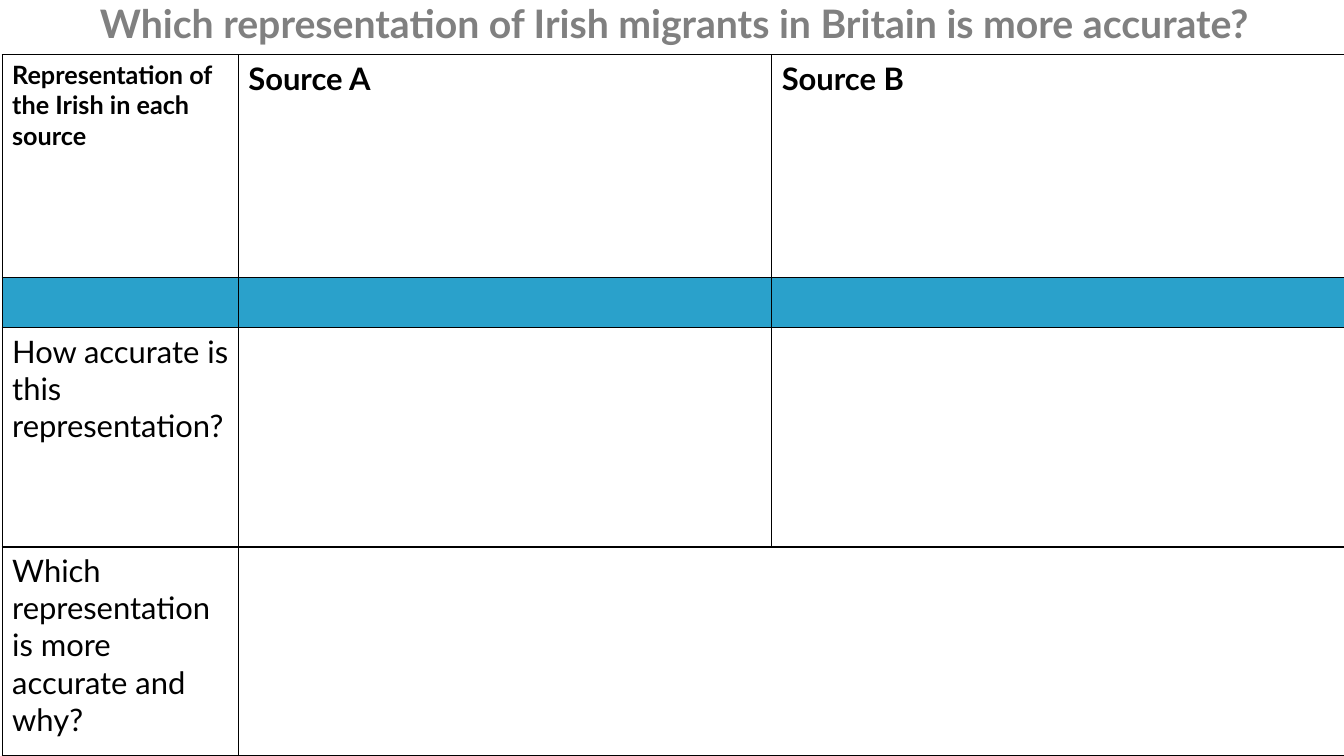
from lxml import etree
from pptx import Presentation
from pptx.dml.color import RGBColor
from pptx.enum.text import MSO_ANCHOR, MSO_AUTO_SIZE, PP_ALIGN
from pptx.oxml.ns import qn
from pptx.util import Pt

PX = 9525
FONT = "Lato"
CENTER = PP_ALIGN.CENTER
TOP = MSO_ANCHOR.TOP
NO_FIT = MSO_AUTO_SIZE.NONE
COLOURS = {"title": "808080", "text": "000000", "border": "000000",
           "cell": "FFFFFF", "divider": "2AA1CB"}
COLUMN_WIDTHS = [225, 508, 548]
ROW_HEIGHTS = [212, 48, 209, 199]
DIVIDER_ROW = 1
QUESTIONS = [
    ["Representation of the Irish in each source", "Source A", "Source B"],
    ["", "", ""],
    ["How accurate is this representation?", "", ""],
    ["Which representation is more accurate and why?", "", ""],
]


def style_font(font, size, bold, colour):
    """Apply the slide's typeface with the given size, weight and colour."""
    font.name = FONT
    font.size = Pt(size)
    font.bold = bold
    font.color.rgb = RGBColor.from_string(COLOURS[colour])


def add_borders(cell):
    """Draw a one-point line on all four sides of a cell."""
    properties = cell._tc.get_or_add_tcPr()
    for side in ("lnL", "lnR", "lnT", "lnB"):
        line = etree.SubElement(properties, qn(f"a:{side}"), w=str(Pt(1)))
        fill = etree.SubElement(line, qn("a:solidFill"))
        etree.SubElement(fill, qn("a:srgbClr"), val=COLOURS["border"])


def add_title(page, left, top, width, height):
    """Place the question heading in the title placeholder."""
    title = page.shapes.title
    title.left, title.top = left * PX, top * PX
    title.width, title.height = width * PX, height * PX
    frame = title.text_frame
    frame.text = "Which representation of Irish migrants in Britain is more accurate?"
    frame.word_wrap = True
    frame.auto_size = NO_FIT
    frame.vertical_anchor = TOP
    para = frame.paragraphs[0]
    para.alignment = CENTER
    para.line_spacing = 0.9
    style_font(para.font, 28, True, "title")


def add_comparison(page, left, top):
    """Build the table that compares the two sources."""
    frame = page.shapes.add_table(
        len(ROW_HEIGHTS), len(COLUMN_WIDTHS), left * PX, top * PX,
        sum(COLUMN_WIDTHS) * PX, sum(ROW_HEIGHTS) * PX)
    table = frame.table
    table.first_row = table.horz_banding = False
    for column, width in zip(table.columns, COLUMN_WIDTHS):
        column.width = width * PX
    for row, height in zip(table.rows, ROW_HEIGHTS):
        row.height = height * PX
    for row, texts in enumerate(QUESTIONS):
        fill = "divider" if row == DIVIDER_ROW else "cell"
        for column, text in enumerate(texts):
            cell = table.cell(row, column)
            add_borders(cell)
            cell.fill.solid()
            cell.fill.fore_color.rgb = RGBColor.from_string(COLOURS[fill])
            if text:
                cell.text = text
                size = 18 if row == column == 0 else 22.1
                style_font(cell.text_frame.paragraphs[0].font, size, row == 0, "text")
    table.cell(3, 1).merge(table.cell(3, 2))


def main():
    """Create the deck and save it."""
    deck = Presentation()
    deck.slide_width, deck.slide_height = 1280 * PX, 720 * PX
    page = deck.slides.add_slide(deck.slide_layouts[5])
    add_comparison(page, 2, 52)
    add_title(page, 2, 0, 1280, 58)
    deck.save("out.pptx")


if __name__ == "__main__":
    main()
